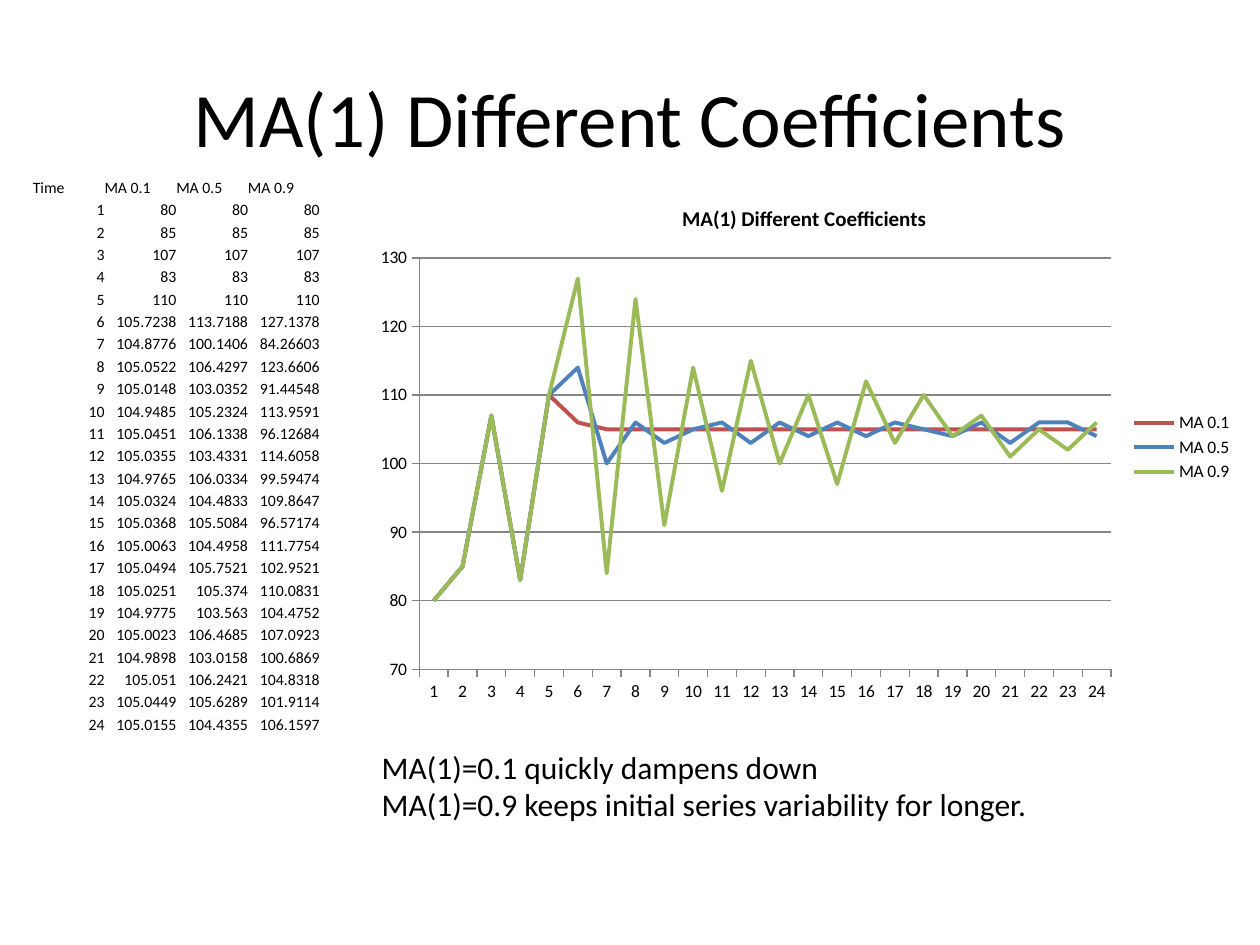
from pptx import Presentation
from pptx.chart.data import CategoryChartData
from pptx.dml.color import RGBColor
from pptx.enum.chart import XL_CHART_TYPE, XL_LEGEND_POSITION, XL_MARKER_STYLE, XL_TICK_MARK
from pptx.enum.text import MSO_ANCHOR, PP_ALIGN
from pptx.oxml.ns import qn
from pptx.util import Pt

LINE_CHART = XL_CHART_TYPE.LINE
LEGEND_RIGHT = XL_LEGEND_POSITION.RIGHT
NO_MARKER = XL_MARKER_STYLE.NONE
TICK_OUTSIDE = XL_TICK_MARK.OUTSIDE
MIDDLE, BOTTOM = MSO_ANCHOR.MIDDLE, MSO_ANCHOR.BOTTOM
LEFT, CENTER, RIGHT = PP_ALIGN.LEFT, PP_ALIGN.CENTER, PP_ALIGN.RIGHT

FONT = "Calibri"
BLACK, GRID_GREY = "000000", "868686"
NO_STYLE_NO_GRID = "{2D5ABB26-0587-4C30-8999-92F81FD0307C}"
TITLE = "MA(1) Different Coefficients"
OBSERVED = [80, 85, 107, 83, 110]
FORECASTS = {
    "MA 0.1": [105.7238, 104.8776, 105.0522, 105.0148, 104.9485, 105.0451, 105.0355,
               104.9765, 105.0324, 105.0368, 105.0063, 105.0494, 105.0251, 104.9775,
               105.0023, 104.9898, 105.051, 105.0449, 105.0155],
    "MA 0.5": [113.7188, 100.1406, 106.4297, 103.0352, 105.2324, 106.1338, 103.4331,
               106.0334, 104.4833, 105.5084, 104.4958, 105.7521, 105.374, 103.563,
               106.4685, 103.0158, 106.2421, 105.6289, 104.4355],
    "MA 0.9": [127.1378, 84.26603, 123.6606, 91.44548, 113.9591, 96.12684, 114.6058,
               99.59474, 109.8647, 96.57174, 111.7754, 102.9521, 110.0831, 104.4752,
               107.0923, 100.6869, 104.8318, 101.9114, 106.1597],
}
SERIES = {name: OBSERVED + forecast for name, forecast in FORECASTS.items()}
SERIES_COLORS = ["C0504D", "4F81BD", "9BBB59"]
TIMES = range(1, 25)
COMMENTS = ["MA(1)=0.1 quickly dampens down",
            "MA(1)=0.9 keeps initial series variability for longer."]


def rgb(value):
    return RGBColor.from_string(value)


def style_font(font, size, bold=False):
    font.name = FONT
    font.size = Pt(size)
    font.bold = bold
    font.color.rgb = rgb(BLACK)


def set_title(slide):
    title = slide.shapes.title
    title.left, title.top, title.width, title.height = Pt(36), Pt(21.6), Pt(648), Pt(90)
    title.text_frame.text = TITLE
    title.text_frame.vertical_anchor = MIDDLE
    paragraph = title.text_frame.paragraphs[0]
    paragraph.alignment = CENTER
    style_font(paragraph.font, 44)


def fill_cell(cell, text, alignment):
    cell.fill.background()
    cell.margin_left = cell.margin_right = cell.margin_top = cell.margin_bottom = 0
    cell.vertical_anchor = BOTTOM
    cell.text = text
    paragraph = cell.text_frame.paragraphs[0]
    paragraph.alignment = alignment
    style_font(paragraph.font, 9)


def add_values_table(slide):
    rows = [["Time", *SERIES], *zip(TIMES, *SERIES.values())]
    frame = slide.shapes.add_table(len(rows), len(rows[0]), Pt(18.75), Pt(100.1),
                                   Pt(164), Pt(319.75))
    table = frame.table
    table.first_row = table.horz_banding = False
    next(frame.element.iter(qn("a:tableStyleId"))).text = NO_STYLE_NO_GRID
    for row_index, row in enumerate(rows):
        for column_index, value in enumerate(row):
            fill_cell(table.cell(row_index, column_index), str(value),
                      RIGHT if row_index else LEFT)


def style_axis(axis):
    axis.major_tick_mark = TICK_OUTSIDE
    axis.format.line.color.rgb = rgb(GRID_GREY)
    axis.format.line.width = Pt(0.75)


def add_line_chart(slide):
    data = CategoryChartData()
    data.categories = [str(time) for time in TIMES]
    for name, values in SERIES.items():
        data.add_series(name, [round(value) for value in values])
    chart = slide.shapes.add_chart(LINE_CHART, Pt(207.6), Pt(104.4),
                                   Pt(504), Pt(302.4), data).chart
    style_font(chart.font, 10)

    chart.has_title = True
    chart.chart_title.include_in_layout = False
    heading = chart.chart_title.text_frame
    heading.text = TITLE
    style_font(heading.paragraphs[0].font, 12, bold=True)

    chart.has_legend = True
    chart.legend.position = LEGEND_RIGHT
    chart.legend.include_in_layout = False

    style_axis(chart.category_axis)
    value_axis = chart.value_axis
    style_axis(value_axis)
    value_axis.minimum_scale, value_axis.maximum_scale = 70, 130
    value_axis.major_unit = 10
    value_axis.tick_labels.number_format = "General"
    value_axis.tick_labels.number_format_is_linked = False
    gridline = value_axis.major_gridlines.format.line
    gridline.color.rgb = rgb(GRID_GREY)
    gridline.width = Pt(0.75)

    chart.plots[0].vary_by_categories = False
    for series, color in zip(chart.plots[0].series, SERIES_COLORS):
        series.smooth = False
        series.marker.style = NO_MARKER
        series.format.line.color.rgb = rgb(color)
        series.format.line.width = Pt(2.25)


def add_comments(slide):
    frame = slide.shapes.add_textbox(Pt(211), Pt(423.7), Pt(437.8), Pt(51.1)).text_frame
    frame.word_wrap = True
    frame.text = "\n".join(COMMENTS)
    for paragraph in frame.paragraphs:
        style_font(paragraph.font, 18)


def main():
    presentation = Presentation()
    presentation.slide_width, presentation.slide_height = Pt(720), Pt(540)
    slide = presentation.slides.add_slide(presentation.slide_layouts.get_by_name("Title Only"))
    set_title(slide)
    add_values_table(slide)
    add_line_chart(slide)
    add_comments(slide)
    presentation.save("out.pptx")


if __name__ == "__main__":
    main()
